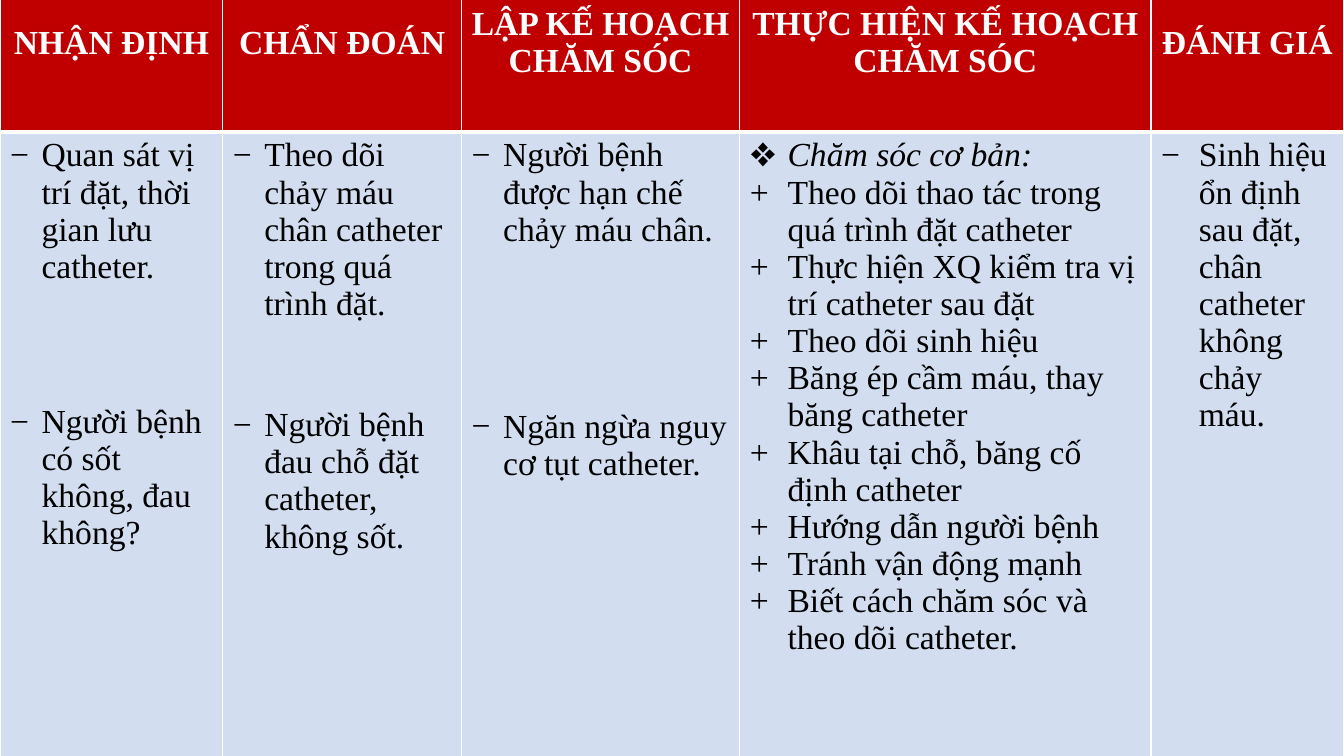
from pptx import Presentation
from pptx.dml.color import RGBColor
from pptx.enum.text import MSO_ANCHOR, PP_ALIGN
from pptx.oxml import parse_xml
from pptx.oxml.ns import nsdecls
from pptx.util import Pt

WHITE = RGBColor(0xFF, 0xFF, 0xFF)
BLACK = RGBColor(0, 0, 0)
RED = RGBColor(0xC0, 0, 0)
PALE_BLUE = RGBColor(0xD2, 0xDE, 0xEF)

COLUMN_WIDTHS = [159.1, 170.6, 198.7, 293.8, 137.5]
ROW_HEIGHTS = [127.4, 478.8]
HEADINGS = ["NHẬN ĐỊNH", "CHẨN ĐOÁN", "LẬP KẾ HOẠCH CHĂM SÓC",
            "THỰC HIỆN KẾ HOẠCH CHĂM SÓC", "ĐÁNH GIÁ"]
INDENTS = [22.5, 22.5, 22.5, 27, 27]
CARE_STEPS = [
    "Theo dõi thao tác trong quá trình đặt catheter",
    "Thực hiện XQ kiểm tra vị trí catheter sau đặt",
    "Theo dõi sinh hiệu",
    "Băng ép cầm máu, thay băng catheter",
    "Khâu tại chỗ, băng cố định catheter",
    "Hướng dẫn người bệnh",
    "Tránh vận động mạnh",
    "Biết cách chăm sóc và theo dõi catheter.",
]
CONTENT = [
    [("−", "Quan sát vị trí đặt, thời gian lưu catheter.", 84),
     ("−", "Người bệnh có sốt không, đau không?", 60)],
    [("−", "Theo dõi chảy máu chân catheter trong quá trình đặt.", 60),
     ("−", "Người bệnh đau chỗ đặt catheter, không sốt.", 60)],
    [("−", "Người bệnh được hạn chế chảy máu chân.", 114),
     ("−", "Ngăn ngừa nguy cơ tụt catheter.", 60)],
    [("❖", "Chăm sóc cơ bản:", 0)] + [("+", step, 0) for step in CARE_STEPS],
    [("−", "Sinh hiệu ổn định sau đặt, chân catheter không chảy máu.", 0)],
]


class CarePlanSlide:
    """Holds the text style and the slide that carries the care plan table."""

    font_name = "Times New Roman"
    font_size = Pt(24)

    def __init__(self, prs):
        self.s = prs.slides.add_slide(prs.slide_layouts[6])

    def table(self, left, top, widths, heights):
        table = self.s.shapes.add_table(
            len(heights), len(widths), Pt(left), Pt(top),
            Pt(sum(widths)), Pt(sum(heights))).table
        for column, width in zip(table.columns, widths):
            column.width = Pt(width)
        for row, height in zip(table.rows, heights):
            row.height = Pt(height)
        return table

    def paint(self, cell, color, top, bottom):
        tcPr = cell._tc.get_or_add_tcPr()
        for side, width in zip("LRTB", (1, 1, top, bottom)):
            tcPr.append(parse_xml(
                f'<a:ln{side} {nsdecls("a")} w="{Pt(width)}"><a:solidFill>'
                f'<a:srgbClr val="{WHITE}"/></a:solidFill></a:ln{side}>'))
        cell.fill.solid()
        cell.fill.fore_color.rgb = color

    def style(self, p, color, bold=False, italic=False):
        for r in p.runs:
            r.font.name = self.font_name
            r.font.size = self.font_size
            r.font.color.rgb = color
            r.font.bold = bold
            r.font.italic = italic

    def heading(self, cell, text):
        self.paint(cell, RED, 1, 3)
        cell.vertical_anchor = MSO_ANCHOR.MIDDLE
        p = cell.text_frame.paragraphs[0]
        p.text = text
        p.alignment = PP_ALIGN.CENTER
        self.style(p, WHITE, bold=True)

    def bullets(self, cell, items, indent):
        self.paint(cell, PALE_BLUE, 3, 1)
        tf = cell.text_frame
        tf.text = "\n".join(text for _, text, _ in items)
        for p, (mark, _, after) in zip(tf.paragraphs, items):
            pPr = p._p.get_or_add_pPr()
            pPr.set("marL", str(Pt(indent)))
            pPr.set("indent", str(-Pt(indent)))
            pPr.append(parse_xml(
                f'<a:buFont {nsdecls("a")} typeface="{self.font_name}"/>'))
            pPr.append(parse_xml(f'<a:buChar {nsdecls("a")} char="{mark}"/>'))
            p.space_after = Pt(after)
            self.style(p, BLACK, italic=mark == "❖")


def main():
    prs = Presentation()
    prs.slide_width, prs.slide_height = Pt(960), Pt(540)
    slide = CarePlanSlide(prs)
    table = slide.table(0, -33.1, COLUMN_WIDTHS, ROW_HEIGHTS)
    for i, (title, items, indent) in enumerate(zip(HEADINGS, CONTENT, INDENTS)):
        slide.heading(table.cell(0, i), title)
        slide.bullets(table.cell(1, i), items, indent)
    prs.save("out.pptx")


if __name__ == "__main__":
    main()
